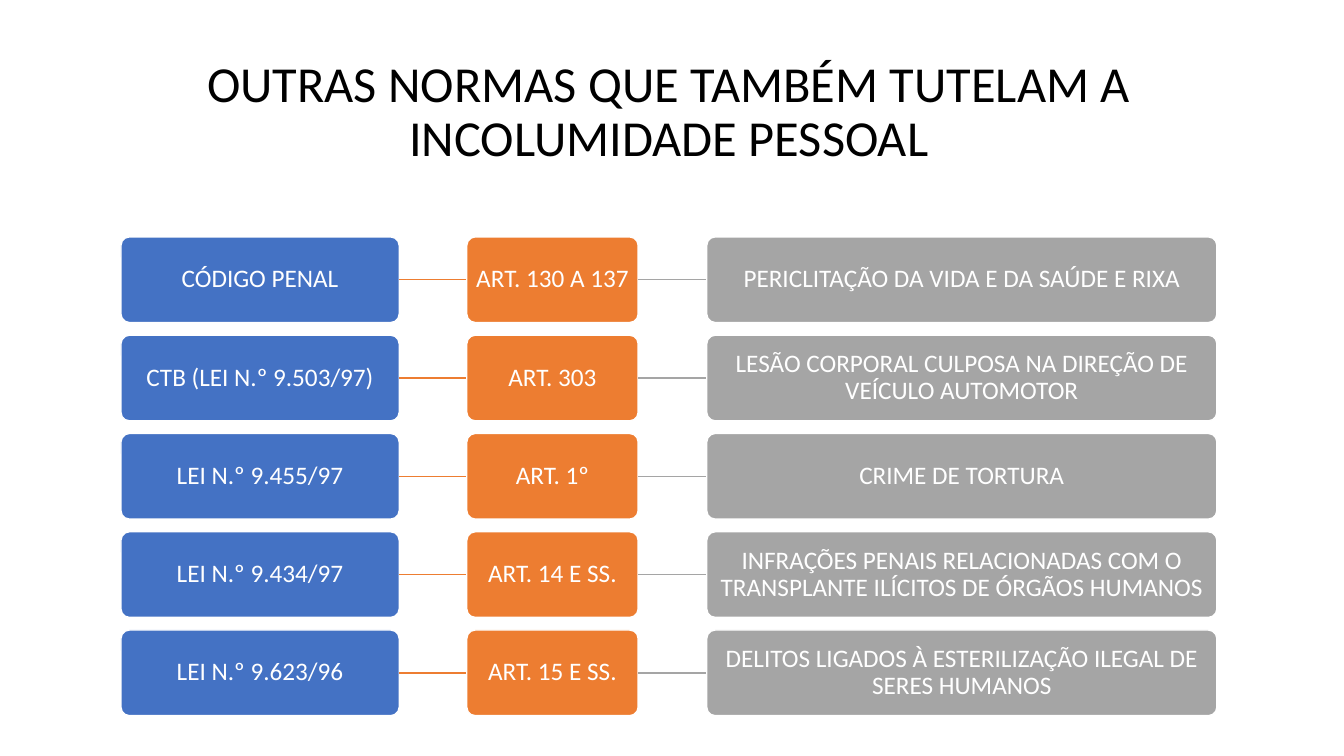
from dataclasses import dataclass

from pptx import Presentation
from pptx.dml.color import RGBColor
from pptx.enum import shapes, text
from pptx.oxml.ns import qn
from pptx.util import Inches, Pt


@dataclass(frozen=True)
class Theme:
    font: str = "Calibri"
    title_size: int = 36
    box_size: int = 18
    line_width: int = 1
    ink: str = "000000"
    paper: str = "FFFFFF"
    law: str = "4472C4"
    article: str = "ED7D31"
    subject: str = "A5A5A5"


THEME = Theme()

# Each column: left offset, width, colour
COLUMNS = [
    (0, 2.76, THEME.law),
    (3.43, 1.7, THEME.article),
    (5.81, 5.06, THEME.subject),
]
BOX_HEIGHT = 0.85

NORMS = [
    ("CÓDIGO PENAL", "ART. 130 A 137", "PERICLITAÇÃO DA VIDA E DA SAÚDE E RIXA"),
    ("CTB (LEI N.º 9.503/97)", "ART. 303",
     "LESÃO CORPORAL CULPOSA NA DIREÇÃO DE VEÍCULO AUTOMOTOR"),
    ("LEI N.º 9.455/97", "ART. 1º", "CRIME DE TORTURA"),
    ("LEI N.º 9.434/97", "ART. 14 E SS.",
     "INFRAÇÕES PENAIS RELACIONADAS COM O TRANSPLANTE ILÍCITOS DE ÓRGÃOS HUMANOS"),
    ("LEI N.º 9.623/96", "ART. 15 E SS.",
     "DELITOS LIGADOS À ESTERILIZAÇÃO ILEGAL DE SERES HUMANOS"),
]


def write_text(frame, content, *, size, color, inset):
    """Fill a text frame with one centred paragraph."""
    frame.word_wrap = True
    frame.auto_size = text.MSO_AUTO_SIZE.NONE
    frame.vertical_anchor = text.MSO_ANCHOR.MIDDLE
    frame.margin_left = frame.margin_right = Inches(inset)
    frame.margin_top = frame.margin_bottom = Inches(inset)
    paragraph = frame.paragraphs[0]
    paragraph.alignment = text.PP_ALIGN.CENTER
    paragraph.line_spacing = 0.9
    run = paragraph.add_run()
    run.text = content
    run.font.name = THEME.font
    run.font.size = Pt(size)
    run.font.color.rgb = RGBColor.from_string(color)


def add_title(slide, content, left, top, width, height):
    title = slide.shapes.title
    title.left, title.top = Inches(left), Inches(top)
    title.width, title.height = Inches(width), Inches(height)
    write_text(title.text_frame, content, size=THEME.title_size,
               color=THEME.ink, inset=0.05)


def add_box(slide, content, color, left, top, width, height):
    box = slide.shapes.add_shape(
        shapes.MSO_SHAPE.ROUNDED_RECTANGLE,
        Inches(left), Inches(top), Inches(width), Inches(height))
    box.adjustments[0] = 0.1
    box.shadow.inherit = False
    box.fill.solid()
    box.fill.fore_color.rgb = RGBColor.from_string(color)
    box.line.color.rgb = RGBColor.from_string(THEME.paper)
    box.line.width = Pt(THEME.line_width)
    write_text(box.text_frame, content, size=THEME.box_size,
               color=THEME.paper, inset=0.01)


def add_link(slide, color, start, end, middle):
    link = slide.shapes.add_connector(
        shapes.MSO_CONNECTOR.STRAIGHT,
        Inches(start), Inches(middle), Inches(end), Inches(middle))
    link.line.color.rgb = RGBColor.from_string(color)
    link.line.width = Pt(THEME.line_width)
    properties = link._element.spPr
    properties.append(properties.makeelement(qn("a:effectLst"), {}))


def add_norm_row(slide, norm, left, top):
    """Place law, article and subject, each linked to the one before."""
    previous_right = None
    for content, (offset, width, color) in zip(norm, COLUMNS):
        box_left = left + offset
        if previous_right is not None:
            add_link(slide, color, previous_right, box_left, top + BOX_HEIGHT / 2)
        add_box(slide, content, color, box_left, top, width, BOX_HEIGHT)
        previous_right = box_left + width


def add_norm_rows(slide, norms, left, top, height):
    """Spread the rows evenly over the given height."""
    pitch = (height - BOX_HEIGHT) / (len(norms) - 1)
    for index, norm in enumerate(norms):
        add_norm_row(slide, norm, left, top + index * pitch)


def main():
    presentation = Presentation()
    presentation.slide_width = Inches(13.33)
    presentation.slide_height = Inches(7.5)
    slide = presentation.slides.add_slide(
        presentation.slide_layouts.get_by_name("Title Only"))

    # Title
    add_title(slide, "OUTRAS NORMAS QUE TAMBÉM TUTELAM A INCOLUMIDADE PESSOAL",
              0.35, 0.4, 12.57, 1.45)

    # Laws, articles and subjects
    add_norm_rows(slide, NORMS, left=1.2, top=2.35, height=4.75)

    presentation.save("out.pptx")


if __name__ == "__main__":
    main()
